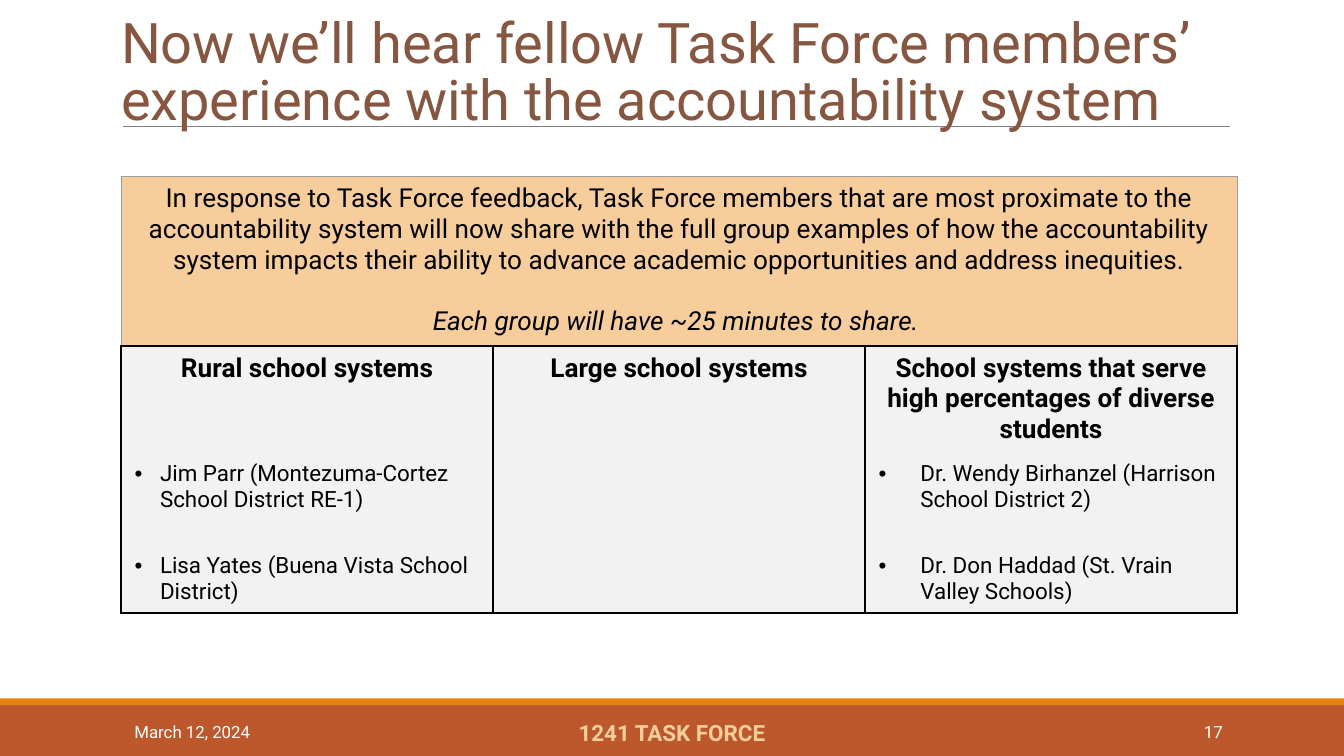
from lxml import etree
from pptx import Presentation
from pptx.dml.color import RGBColor
from pptx.enum.shapes import MSO_CONNECTOR, MSO_SHAPE
from pptx.enum.text import MSO_ANCHOR, PP_ALIGN
from pptx.oxml.ns import qn
from pptx.util import Cm, Pt

LEFT, CENTER, RIGHT = PP_ALIGN.LEFT, PP_ALIGN.CENTER, PP_ALIGN.RIGHT
MIDDLE = MSO_ANCHOR.MIDDLE
RECTANGLE = MSO_SHAPE.RECTANGLE
STRAIGHT = MSO_CONNECTOR.STRAIGHT

FONT = "Roboto"
WHITE, BLACK, GRAY = "FFFFFF", "000000", "9E9E9E"
PEACH, PALE = "F7CD9C", "F2F2F2"

INTRO = (
    "In response to Task Force feedback, Task Force members that are most "
    "proximate to the accountability system will now share with the full "
    "group examples of how the accountability system impacts their ability "
    "to advance academic opportunities and address inequities."
)
GROUPS = [
    ("Rural school systems", 0.48, [
        "Jim Parr (Montezuma-Cortez School District RE-1)",
        "Lisa Yates (Buena Vista School District)",
    ]),
    ("Large school systems", 0, []),
    ("School systems that serve high percentages of diverse students", 0.79, [
        "Dr. Wendy Birhanzel (Harrison School District 2)",
        "Dr. Don Haddad (St. Vrain Valley Schools)",
    ]),
]
ROW_HEIGHTS = [3.18, 2.01, 1.74, 1.24]


def rgb(color):
    """Turn a hex string into a colour."""
    return RGBColor.from_string(color)


def add_run(p, text, size, color=BLACK, bold=False, italic=False):
    """Append a formatted run to a paragraph."""
    r = p.add_run()
    r.text = text
    r.font.name = FONT
    r.font.size = Pt(size)
    r.font.color.rgb = rgb(color)
    r.font.bold = bold
    r.font.italic = italic


def add_bar(s, top, height, color):
    """Draw a full-width bar."""
    sp = s.shapes.add_shape(RECTANGLE, 0, Cm(top), Cm(25.4), Cm(height))
    sp.shadow.inherit = False
    sp.fill.solid()
    sp.fill.fore_color.rgb = rgb(color)
    sp.line.fill.background()


def add_rule(s, left, right, y, color):
    """Draw a thin horizontal rule."""
    line = s.shapes.add_connector(STRAIGHT, Cm(left), Cm(y), Cm(right), Cm(y))
    line.line.color.rgb = rgb(color)
    line.line.width = Pt(0.75)
    etree.SubElement(line._element.spPr, qn("a:effectLst"))


def add_text(s, box, text, size, color, align=LEFT, bold=False):
    """Add a vertically centred text box and return its frame."""
    tf = s.shapes.add_textbox(*map(Cm, box)).text_frame
    tf.word_wrap = True
    tf.vertical_anchor = MIDDLE
    p = tf.paragraphs[0]
    p.alignment = align
    add_run(p, text, size, color, bold)
    return tf


def add_title(s, text):
    """Add the slide title without insets."""
    tf = add_text(s, (2.29, 0.61, 20.96, 1.6), text, 30, "865640")
    tf.margin_left = tf.margin_right = tf.margin_top = tf.margin_bottom = 0
    tf.paragraphs[0].line_spacing = 0.85


def set_borders(cell, **borders):
    """Set the named sides (L, R, T, B) to (colour, points), the rest to none."""
    tcPr = cell._tc.get_or_add_tcPr()
    for side in "LRTB":
        ln = etree.SubElement(tcPr, qn(f"a:ln{side}"))
        if side in borders:
            color, width = borders[side]
            ln.set("w", str(Pt(width)))
            fill = etree.SubElement(ln, qn("a:solidFill"))
            etree.SubElement(fill, qn("a:srgbClr"), val=color)
        else:
            etree.SubElement(ln, qn("a:noFill"))


def style_cell(cell, color, **borders):
    """Give a cell its borders and fill."""
    set_borders(cell, **borders)
    cell.fill.solid()
    cell.fill.fore_color.rgb = rgb(color)


def set_bullet(p, indent):
    """Give a paragraph a black bullet with a hanging indent."""
    pPr = p._p.get_or_add_pPr()
    pPr.set("marL", str(Cm(indent)))
    pPr.set("indent", str(-Cm(indent)))
    buClr = etree.SubElement(pPr, qn("a:buClr"))
    etree.SubElement(buClr, qn("a:srgbClr"), val=BLACK)
    etree.SubElement(pPr, qn("a:buFont"), typeface="Arial")
    etree.SubElement(pPr, qn("a:buChar"), char="•")


def fill_intro(table):
    """Fill the merged top row."""
    thin, solid = (GRAY, 0.75), (BLACK, 1)
    for cell in table.rows[0].cells:
        style_cell(cell, PEACH, L=thin, R=thin, T=thin, B=solid)
    cell = table.cell(0, 0)
    cell.merge(table.cell(0, len(GROUPS) - 1))
    tf = cell.text_frame
    p = tf.paragraphs[0]
    p.alignment = CENTER
    add_run(p, INTRO, 14)
    p = tf.add_paragraph()
    p.alignment = CENTER
    p.space_before = Pt(16.5)
    add_run(p, "Each group will have ~25 minutes to share. ", 14, italic=True)


def fill_group(table, col, heading, indent, members):
    """Fill one column with its heading and members."""
    solid = (BLACK, 1)
    last = len(ROW_HEIGHTS) - 1
    for row in range(1, last + 1):
        sides = {"L": solid, "R": solid}
        if row == 1:
            sides["T"] = solid
        if row == last:
            sides["B"] = solid
        style_cell(table.cell(row, col), PALE, **sides)
    p = table.cell(1, col).text_frame.paragraphs[0]
    p.alignment = CENTER
    add_run(p, heading, 14, bold=True)
    for row, member in enumerate(members, 2):
        p = table.cell(row, col).text_frame.paragraphs[0]
        set_bullet(p, indent)
        add_run(p, member, 12)


def add_group_table(s):
    """Add the table of presenting groups."""
    width = 21.09
    table = s.shapes.add_table(
        len(ROW_HEIGHTS), len(GROUPS),
        Cm(2.29), Cm(3.33), Cm(width), Cm(sum(ROW_HEIGHTS)),
    ).table
    table.first_row = table.horz_banding = False
    for row, height in zip(table.rows, ROW_HEIGHTS):
        row.height = Cm(height)
    for column in table.columns:
        column.width = Cm(width / len(GROUPS))
    fill_intro(table)
    for col, group in enumerate(GROUPS):
        fill_group(table, col, *group)


def main():
    """Build and save the slide."""
    prs = Presentation()
    prs.slide_width, prs.slide_height = Cm(25.4), Cm(14.29)
    s = prs.slides.add_slide(prs.slide_layouts[6])
    add_bar(s, 13.33, 0.96, "BD582C")
    add_bar(s, 13.2, 0.13, "E48312")
    add_rule(s, 2.32, 23.24, 2.39, "7F7F7F")
    add_title(s, "Now we’ll hear fellow Task Force members’ "
                 "experience with the accountability system")
    add_group_table(s)
    add_text(s, (2.29, 13.46, 5.16, 0.76), "March 12, 2024", 9, WHITE)
    add_text(s, (7.67, 13.46, 10.06, 0.76), "1241 TASK FORCE", 12, PEACH,
             CENTER, bold=True)
    add_text(s, (20.62, 13.46, 2.74, 0.76), "17", 9, WHITE, RIGHT)
    prs.save("out.pptx")


if __name__ == "__main__":
    main()
